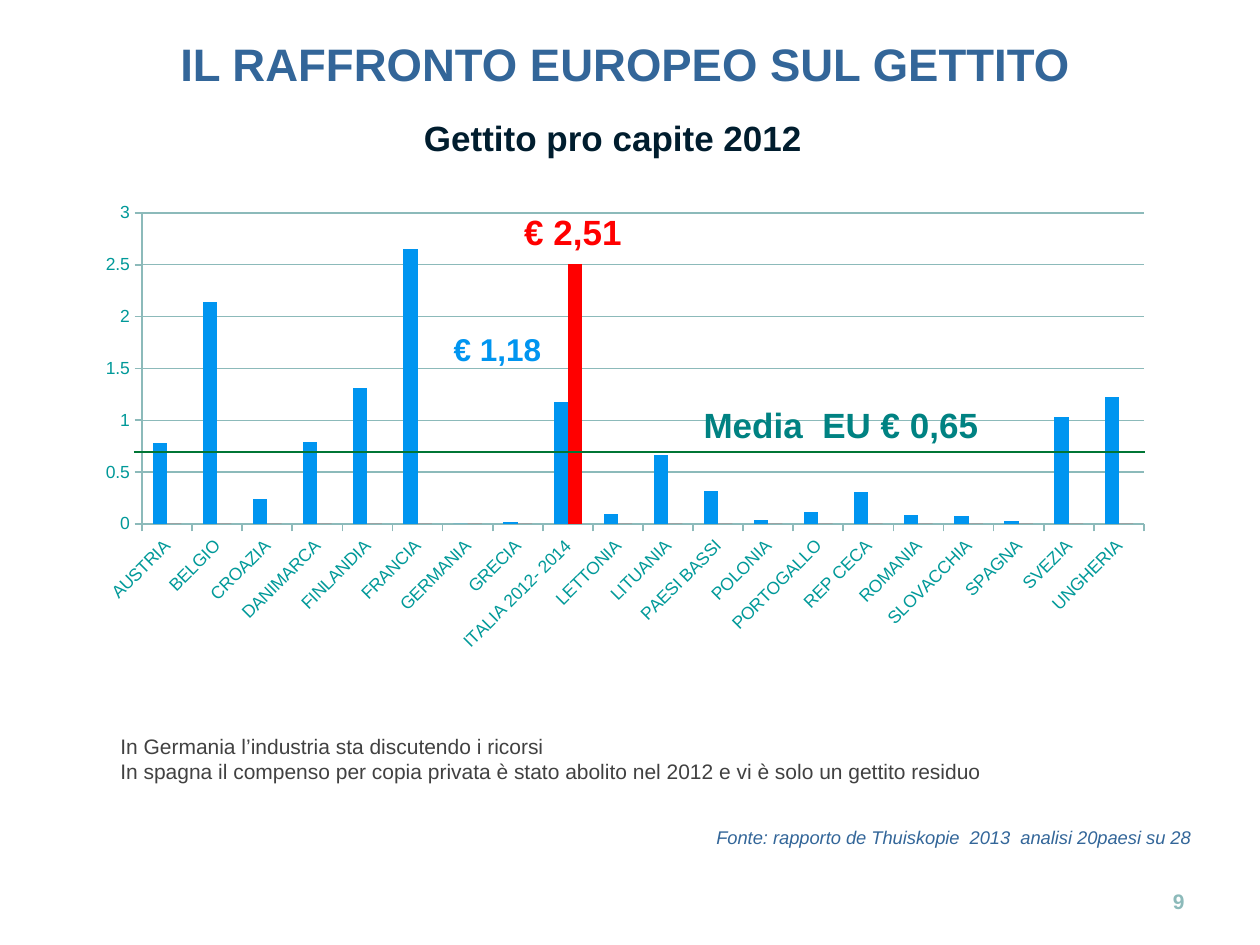
from lxml import etree
from pptx import Presentation
from pptx.chart.data import CategoryChartData
from pptx.dml.color import RGBColor
from pptx.enum.chart import XL_CHART_TYPE as CT, XL_TICK_MARK as TICK
from pptx.enum.shapes import MSO_CONNECTOR
from pptx.enum.text import MSO_ANCHOR as ANCHOR, PP_ALIGN as AL
from pptx.oxml.ns import qn
from pptx.util import Pt

# Content
TITLE = "IL RAFFRONTO EUROPEO SUL GETTITO"
NOTES = [
    "In Germania l’industria sta discutendo i ricorsi",
    "In spagna il compenso per copia privata è stato abolito nel 2012 "
    "e vi è solo un gettito residuo",
]
YIELDS = [
    ("AUSTRIA", 0.78), ("BELGIO", 2.14), ("CROAZIA", 0.24), ("DANIMARCA", 0.79),
    ("FINLANDIA", 1.31), ("FRANCIA", 2.65), ("GERMANIA", 0), ("GRECIA", 0.02),
    ("ITALIA 2012- 2014", 1.18), ("LETTONIA", 0.1), ("LITUANIA", 0.66),
    ("PAESI BASSI", 0.32), ("POLONIA", 0.04), ("PORTOGALLO", 0.11),
    ("REP CECA", 0.31), ("ROMANIA", 0.09), ("SLOVACCHIA", 0.08),
    ("SPAGNA", 0.03), ("SVEZIA", 1.03), ("UNGHERIA", 1.22),
]
YIELDS_2014 = {"ITALIA 2012- 2014": 2.51}
COLORS = {
    "heading": "336699", "dark": "001D2E", "note": "414141", "label": "009999",
    "axis": "8CBABA", "bar": "0095F0", "highlight": "FF0000",
    "mean": "008282", "mean_line": "007635",
}
FONT = "Arial"

# Geometry in px
PX = 914400 / 126
CHART = (84, 195, 1081, 466)
PLOT = (142, 213, 1002, 311)
MEAN_LINE = (134, 452, 1145, 452)


def emu(*values):
    return [round(v * PX) for v in values]


def rgb(name):
    return RGBColor.from_string(COLORS[name])


def write(sp, lines, *, size, color, bold=False, italic=False,
          align=AL.LEFT, anchor=ANCHOR.TOP, wrap=True):
    tf = sp.text_frame
    tf.word_wrap, tf.vertical_anchor = wrap, anchor
    for i, text in enumerate(lines):
        p = tf.add_paragraph() if i else tf.paragraphs[0]
        p.alignment = align
        r = p.add_run()
        r.text = text
        r.font.name, r.font.size = FONT, Pt(size)
        r.font.bold, r.font.italic = bold, italic
        r.font.color.rgb = rgb(color)


def add_text(box, lines, **fmt):
    write(s.shapes.add_textbox(*emu(*box)), lines, **fmt)


def style_line(line, color, width):
    line.color.rgb = rgb(color)
    line.width = Pt(width)


prs = Presentation()
prs.slide_width, prs.slide_height = emu(1260, 945)
s = prs.slides.add_slide(prs.slide_layouts[5])

# Title, subtitle, notes and source
title = s.shapes.title
title.left, title.top, title.width, title.height = emu(15, 30, 1221, 68)
write(title, [TITLE], size=26, color="heading", bold=True, align=AL.CENTER)
add_text((410, 110, 406, 55), ["Gettito pro capite 2012"], size=20,
         color="dark", bold=True, align=AL.CENTER, wrap=False)
add_text((108, 727, 1097, 63), NOTES, size=12, color="note")
add_text((292, 820, 912, 35),
         ["Fonte: rapporto de Thuiskopie  2013  analisi 20paesi su 28"],
         size=10.5, color="heading", italic=True, align=AL.RIGHT)

# Chart
data = CategoryChartData()
data.categories = [country for country, _ in YIELDS]
data.add_series("Series 1", [value for _, value in YIELDS])
data.add_series("Series 2", [YIELDS_2014.get(country, 0) for country, _ in YIELDS])
chart = s.shapes.add_chart(CT.COLUMN_CLUSTERED, *emu(*CHART), data).chart
chart.has_legend = chart.has_title = False
chart.font.name, chart.font.size = FONT, Pt(10)
chart.font.color.rgb = rgb("label")

plot = chart.plots[0]
plot.gap_width, plot.overlap, plot.vary_by_categories = 150, 0, False
for series, color in zip(plot.series, ("bar", "highlight")):
    series.format.fill.solid()
    series.format.fill.fore_color.rgb = rgb(color)

cat_axis, val_axis = chart.category_axis, chart.value_axis
for axis in (cat_axis, val_axis):
    axis.major_tick_mark, axis.minor_tick_mark = TICK.OUTSIDE, TICK.NONE
    style_line(axis.format.line, "axis", 1)
val_axis.minimum_scale, val_axis.maximum_scale, val_axis.major_unit = 0, 3, 0.5
val_axis.tick_labels.number_format = "General"
val_axis.tick_labels.number_format_is_linked = False
style_line(val_axis.major_gridlines.format.line, "axis", 0.75)

# Slanted country names
cat_axis.tick_labels.font.size = Pt(10)
body = cat_axis._element.find(qn("c:txPr")).find(qn("a:bodyPr"))
body.set("rot", "-2700000")
body.set("vert", "horz")

# Fixed inner plot area, as fractions of the chart
area = chart._chartSpace.chart.plotArea
for old in area.findall(qn("c:layout")):
    area.remove(old)
layout = etree.Element(qn("c:layout"))
area.insert(0, layout)
manual = etree.SubElement(layout, qn("c:manualLayout"))
fractions = [
    (PLOT[0] - CHART[0]) / CHART[2], (PLOT[1] - CHART[1]) / CHART[3],
    PLOT[2] / CHART[2], PLOT[3] / CHART[3],
]
settings = [("layoutTarget", "inner"), ("xMode", "edge"), ("yMode", "edge")]
settings += [(k, f"{v:.4f}") for k, v in zip("xywh", fractions)]
for tag, value in settings:
    etree.SubElement(manual, qn(f"c:{tag}")).set("val", value)

# Value labels and the EU mean
add_text((690, 397, 302, 55), ["Media  EU € 0,65"], size=20, color="mean",
         bold=True, align=AL.CENTER, wrap=False)
add_text((428, 324, 139, 50), ["€ 1,18"], size=18, color="bar",
         bold=True, align=AL.CENTER)
add_text((496, 204, 154, 55), ["€ 2,51"], size=20, color="highlight",
         bold=True, align=AL.CENTER)
mean = s.shapes.add_connector(MSO_CONNECTOR.STRAIGHT, *emu(*MEAN_LINE))
style_line(mean.line, "mean_line", 1.5)
etree.SubElement(mean._element.spPr, qn("a:effectLst"))

# Page number
add_text((903, 876, 294, 50), ["9"], size=12, color="axis", bold=True,
         align=AL.RIGHT, anchor=ANCHOR.MIDDLE)

prs.save("out.pptx")
